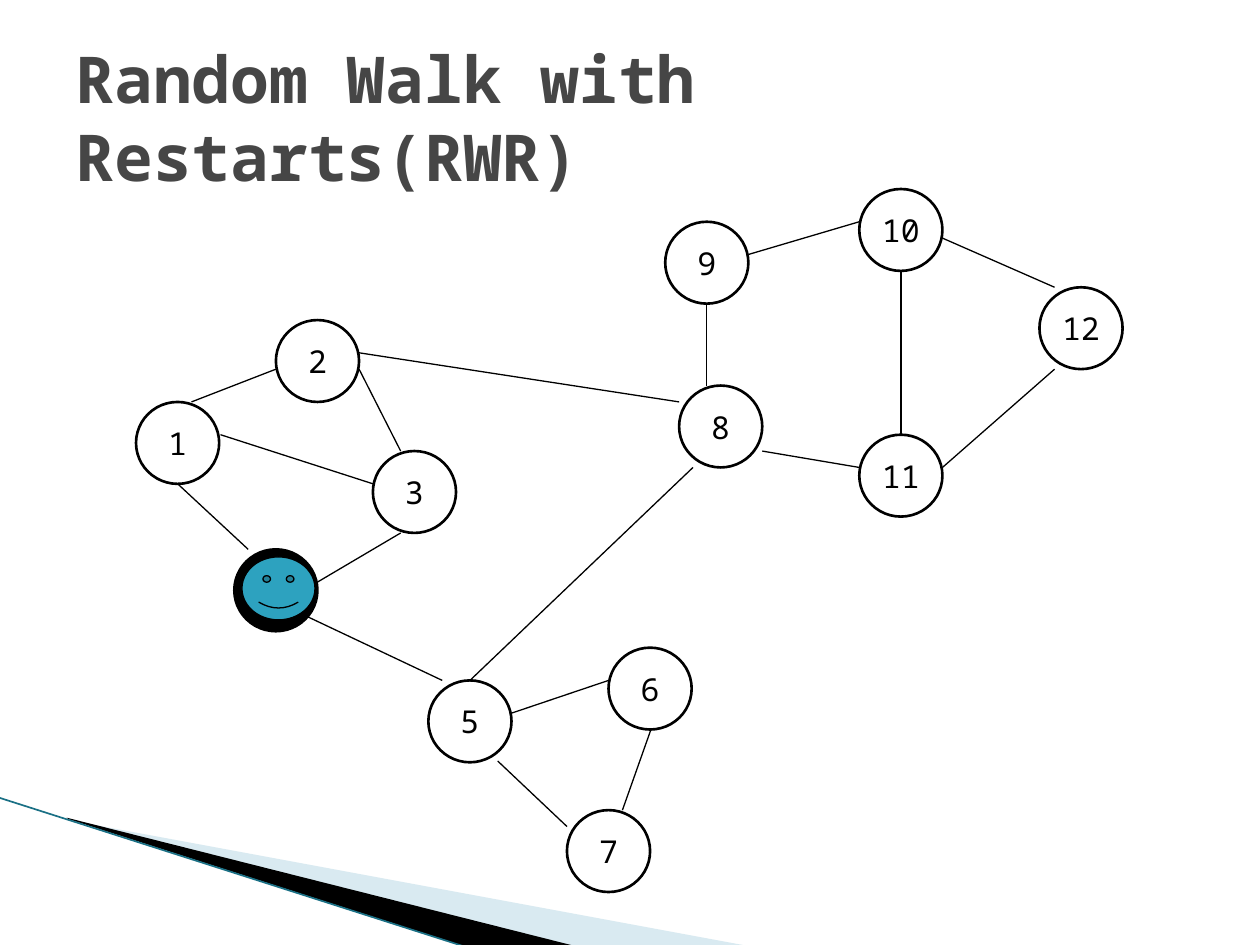
from lxml.etree import SubElement
from pptx import Presentation
from pptx.dml.color import RGBColor
from pptx.enum.shapes import MSO_CONNECTOR, MSO_SHAPE
from pptx.enum.text import MSO_ANCHOR, MSO_AUTO_SIZE, PP_ALIGN
from pptx.oxml.ns import qn
from pptx.util import Pt

SCALE = 9144
FONT = "Noto Sans Mono"
NODE_WIDTH, NODE_HEIGHT = 66, 65


def color(value):
    return RGBColor.from_string(value)


def add_line(start, end, line_color, width):
    points = [value * SCALE for value in start + end]
    connector = slide.shapes.add_connector(MSO_CONNECTOR.STRAIGHT, *points)
    connector.line.color.rgb = color(line_color)
    connector.line.width = Pt(width)
    SubElement(connector._element.spPr, qn("a:effectLst"))


presentation = Presentation()
presentation.slide_width = 1000 * SCALE
presentation.slide_height = 750 * SCALE
slide = presentation.slides.add_slide(presentation.slide_layouts[5])

wedges = [
    ("A0CBDC", 40, [(55, 651), (595, 751), (456, 751), (55, 650)]),
    ("000000", 100, [(53, 649), (457, 751), (372, 752), (54, 650)]),
]
for fill_color, opacity, points in wedges:
    builder = slide.shapes.build_freeform(*points[0], scale=SCALE)
    builder.add_line_segments(points[1:], close=True)
    wedge = builder.convert_to_shape()
    wedge.shadow.inherit = False
    wedge.fill.solid()
    wedge.fill.fore_color.rgb = color(fill_color)
    wedge.line.fill.background()
    if opacity < 100:
        fill = wedge._element.spPr.find(qn("a:solidFill"))
        SubElement(fill[0], qn("a:alpha"), val=str(opacity * 1000))
add_line((-1, 633), (371, 752), "1A7085", 0.95)

title = slide.shapes.title
title.left, title.top = 50 * SCALE, 30 * SCALE
title.width, title.height = 900 * SCALE, 125 * SCALE
title.text_frame.text = "Random Walk with Restarts(RWR)"
title.text_frame.word_wrap = True
title.text_frame.auto_size = MSO_AUTO_SIZE.NONE
title.text_frame.vertical_anchor = MSO_ANCHOR.MIDDLE
paragraph = title.text_frame.paragraphs[0]
paragraph.alignment = PP_ALIGN.LEFT
font = paragraph.runs[0].font
font.name, font.size, font.bold = FONT, Pt(36.9), True
font.color.rgb = color("464646")

nodes = [
    ("1", 108, 319), ("", 186, 436), ("3", 296, 358), ("2", 219, 254),
    ("5", 340, 540), ("6", 483, 514), ("7", 450, 643), ("9", 528, 176),
    ("10", 682, 150), ("8", 539, 306), ("11", 682, 345), ("12", 825, 228),
]
for label, left, top in nodes:
    node = slide.shapes.add_shape(
        MSO_SHAPE.OVAL, left * SCALE, top * SCALE, NODE_WIDTH * SCALE, NODE_HEIGHT * SCALE
    )
    node.shadow.inherit = False
    node.fill.solid()
    node.fill.fore_color.rgb = color("FFFFFF" if label else "000000")
    node.line.color.rgb = color("000000")
    node.line.width = Pt(1.5)
    if label:
        node.text_frame.text = label
        node.text_frame.word_wrap = False
        node.text_frame.vertical_anchor = MSO_ANCHOR.MIDDLE
        paragraph = node.text_frame.paragraphs[0]
        paragraph.alignment = PP_ALIGN.CENTER
        font = paragraph.runs[0].font
        font.name, font.size = FONT, Pt(18)
        font.color.rgb = color("000000")

edges = [
    ((141, 384), (197, 436)), ((175, 345), (296, 384)), ((152, 319), (219, 293)),
    ((285, 293), (318, 358)), ((252, 462), (318, 423)), ((241, 488), (351, 540)),
    ((406, 566), (483, 540)), ((395, 604), (450, 656)), ((517, 578), (494, 643)),
    ((605, 358), (682, 371)), ((748, 371), (837, 293)), ((748, 189), (837, 228)),
    ((594, 202), (682, 176)), ((561, 241), (561, 306)), ((715, 215), (715, 345)),
    ((285, 280), (539, 319)), ((373, 540), (550, 371)),
]
for start, end in edges:
    add_line(start, end, "000000", 0.75)

walker = slide.shapes.add_shape(
    MSO_SHAPE.SMILEY_FACE, 192 * SCALE, 442 * SCALE, 58 * SCALE, 50 * SCALE
)
walker.shadow.inherit = False
walker.fill.solid()
walker.fill.fore_color.rgb = color("2DA2BF")
walker.line.color.rgb = color("000000")
walker.line.width = Pt(0.75)

presentation.save("out.pptx")
